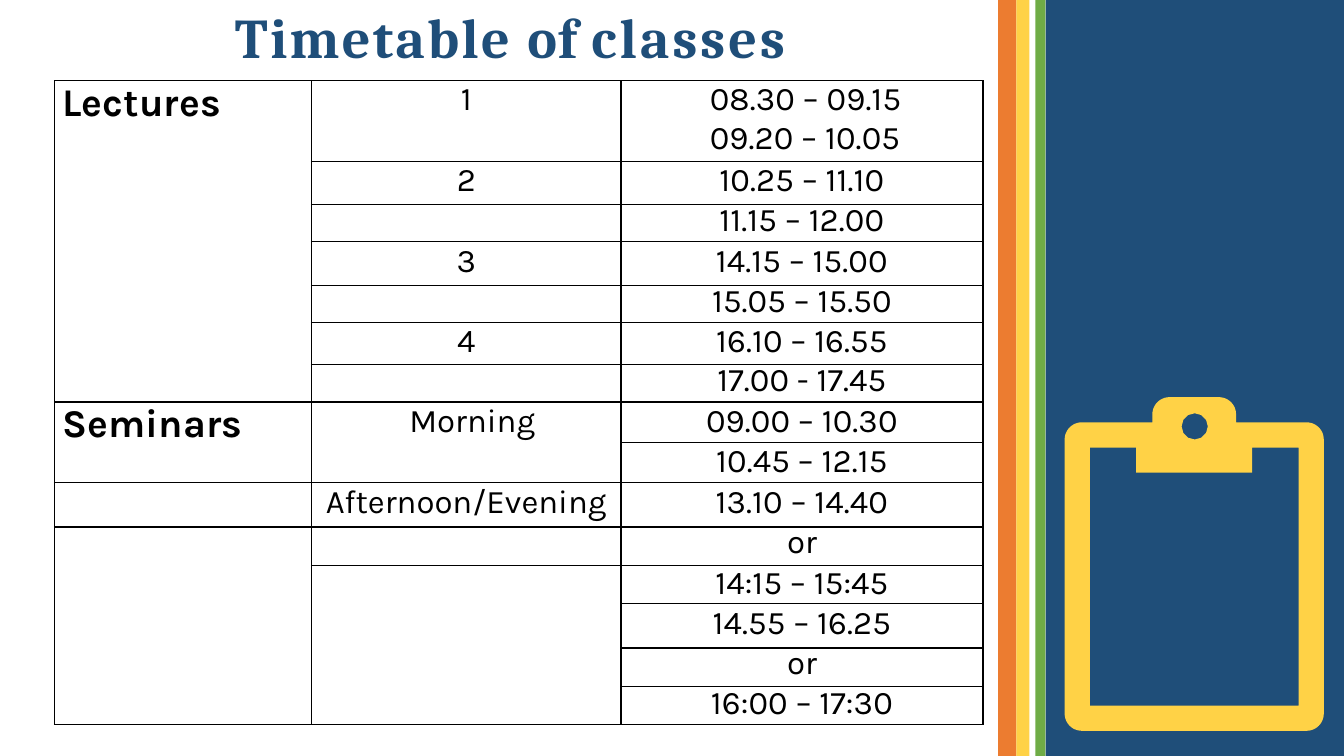
from math import cos, radians, sin

from lxml import etree
from pptx import Presentation
from pptx.dml.color import RGBColor
from pptx.enum.shapes import MSO_SHAPE
from pptx.enum.text import MSO_ANCHOR, MSO_AUTO_SIZE, PP_ALIGN
from pptx.oxml import parse_xml
from pptx.oxml.ns import qn
from pptx.util import Pt

PX = 9144  # 100 px to the inch
WIDTH, HEIGHT = 1333, 750
RECTANGLE = MSO_SHAPE.RECTANGLE
LEFT, CENTER = PP_ALIGN.LEFT, PP_ALIGN.CENTER
TOP = MSO_ANCHOR.TOP
GROW = MSO_AUTO_SIZE.SHAPE_TO_FIT_TEXT
NAVY, GREEN, YELLOW, ORANGE, BLACK = "1F4E79", "6FAC46", "FFD246", "EC7C30", "000000"
PLAIN_STYLE = "{2D5ABB26-0587-4C30-8999-92F81FD0307C}"
DRAWING = "http://schemas.openxmlformats.org/drawingml/2006/main"


def paint(fill, colour):
    fill.solid()
    fill.fore_color.rgb = RGBColor.from_string(colour)


def write(para, text, size=23.5, font="Karla", colour=BLACK, bold=False,
          tracking=0.1, leading=None, before=0, align=CENTER):
    para.alignment = align
    para.space_before = Pt(before)
    if leading:
        para.line_spacing = Pt(leading)
    span = para.add_run()
    span.text = text
    span.font.size, span.font.name, span.font.bold = Pt(size), font, bold
    paint(span.font.fill, colour)
    span.font._element.set("spc", str(round(tracking * 100)))


deck = Presentation()
deck.slide_width, deck.slide_height = WIDTH * PX, HEIGHT * PX
page = deck.slides.add_slide(deck.slide_layouts[5])

# Title
title = page.shapes.title
title.left, title.top, title.width, title.height = 233 * PX, 0, 564 * PX, 70 * PX
frame = title.text_frame
frame.margin_left = frame.margin_right = frame.margin_bottom = 0
frame.margin_top = 2 * PX
frame.vertical_anchor, frame.auto_size = TOP, GROW
for word, tracking in [("Timetable ", 1.7), ("of ", 0.8), ("classes", 2.2)]:
    write(frame.paragraphs[0], word, size=40, font="Cambria", colour=NAVY, bold=True,
          tracking=tracking, before=1.4, align=LEFT)

# Side panel and stripes
for left, right, colour in [(1037, WIDTH, NAVY), (1027, 1037, GREEN),
                            (990, 1008, ORANGE), (1008, 1021, YELLOW)]:
    stripe = page.shapes.add_shape(RECTANGLE, left * PX, 0, (right - left) * PX, HEIGHT * PX)
    stripe.shadow.inherit = False
    stripe.line.fill.background()
    paint(stripe.fill, colour)

# Clipboard: each corner is centre x, centre y, radius, start angle, sweep
board_corners = [
    (1160, 411, 17, 180, 90), (1209, 411, 17, 270, 90), (1226, 419, 0, 0, 0),
    (1296, 436, 17, 270, 90), (1296, 708, 17, 0, 90), (1073, 708, 17, 90, 90),
    (1073, 436, 17, 180, 90), (1143, 419, 0, 0, 0),
]
ring_hole = [(1185, 423, 13, 360, -360)]
paper_hole = [(x, y, 0, 0, 0) for x, y in [
    (1081, 444), (1081, 700), (1288, 700), (1288, 444),
    (1242, 444), (1242, 469), (1127, 469), (1127, 444)]]
contours = [
    [((x + radius * cos(radians(start + sweep * step / 12))) * PX,
      (y + radius * sin(radians(start + sweep * step / 12))) * PX)
     for x, y, radius, start, sweep in corners
     for step in range(13 if sweep else 1)]
    for corners in (board_corners, ring_hole, paper_hole)
]
outline = page.shapes.build_freeform(*contours[0][0])
outline.add_line_segments(contours[0][1:])
for contour in contours[1:]:
    outline.move_to(*contour[0])
    outline.add_line_segments(contour[1:])
clipboard = outline.convert_to_shape()
clipboard.shadow.inherit = False
clipboard.line.fill.background()
paint(clipboard.fill, YELLOW)

# Timetable: row height, kind, session, time, line spacing of the time
rows = [
    (80, "Lectures", "1", "08.30 – 09.15\n09.20 – 10.05", 27.1),
    (43, "", "2", "10.25 – 11.10", 27.2),
    (37, "", "", "11.15 – 12.00", 25.1),
    (43, "", "3", "14.15 – 15.00", 27.4),
    (37, "", "", "15.05 – 15.50", 25.1),
    (42, "", "4", "16.10 – 16.55", 27.4),
    (37, "", "", "17.00 - 17.45", 25.1),
    (40, "Seminars", "Morning", "09.00 – 10.30", 27.5),
    (40, "", "", "10.45 – 12.15", 27.6),
    (44, "", "Afternoon/Evening", "13.10 – 14.40", 27.6),
    (38, "", "", "or", 25.1),
    (38, "", "", "14:15 – 15:45", 26.5),
    (44, "", "", "14.55 – 16.25", 27.8),
    (38, "", "", "or", 25.1),
    (38, "", "", "16:00 – 17:30", 26.4),
]
widths = [255, 307, 359]
block_starts = [{0, 7, 9}, {0, 1, 2, 3, 4, 5, 6, 7, 9, 10}, set(range(15)) - {11, 14}]
indents = {(0, 0): 8, (7, 0): 8, (0, 2): 88, (7, 1): 97}

holder = page.shapes.add_table(len(rows), len(widths), 54 * PX, 80 * PX,
                               sum(widths) * PX, sum(row[0] for row in rows) * PX)
table = holder.table
table.first_row = table.horz_banding = False
table._tbl.tblPr.find(qn("a:tableStyleId")).text = PLAIN_STYLE
for column, width in zip(table.columns, widths):
    column.width = width * PX
for column in (0, 1):
    table.cell(7, column).merge(table.cell(8, column))

for row, (height, *texts, leading) in enumerate(rows):
    table.rows[row].height = height * PX
    for column, text in enumerate(texts):
        cell = table.cell(row, column)
        cell.margin_right = cell.margin_top = cell.margin_bottom = 0
        cell.margin_left = indents.get((row, column), 0) * PX
        cell.vertical_anchor = TOP

        # Borders
        sides = ["L", "R"]
        if row in block_starts[column]:
            sides.append("T")
        if row + 1 in block_starts[column] or row + 1 == len(rows):
            sides.append("B")
        for side in sides:
            border = parse_xml(f'<a:ln{side} xmlns:a="{DRAWING}" w="12700"/>')
            ink = etree.SubElement(border, qn("a:solidFill"))
            etree.SubElement(ink, qn("a:srgbClr"), val=BLACK)
            cell._tc.get_or_add_tcPr().append(border)
        cell.fill.background()

        # Words
        align = LEFT if (row, column) in indents else CENTER
        for index, line in enumerate(text.split("\n") if text else []):
            para = cell.text_frame.paragraphs[0] if index == 0 else cell.text_frame.add_paragraph()
            if column == 0:
                write(para, line, size=28, bold=True, leading=32.6, align=align)
            elif column == 1:
                write(para, line, tracking=0, leading=leading, align=align)
            else:
                write(para, line, leading=leading, before=0.7 * index, align=align)

deck.save("out.pptx")
